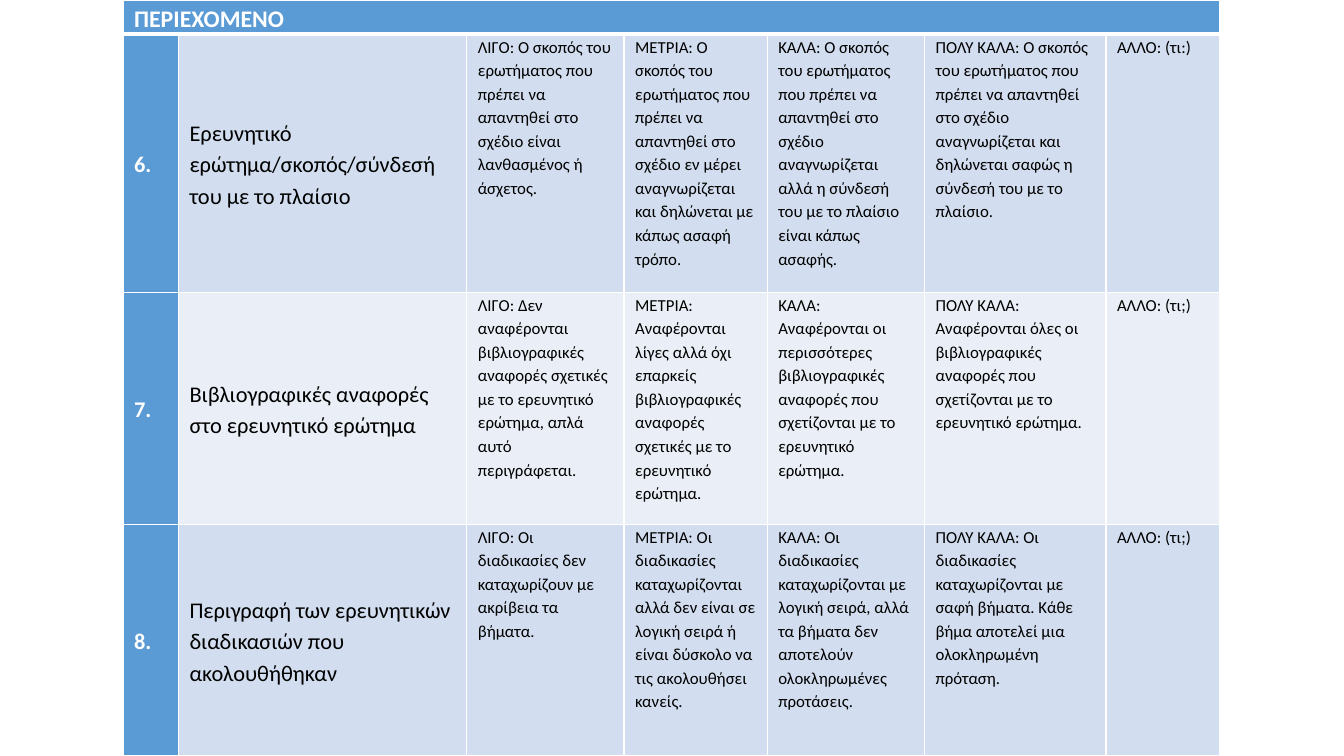
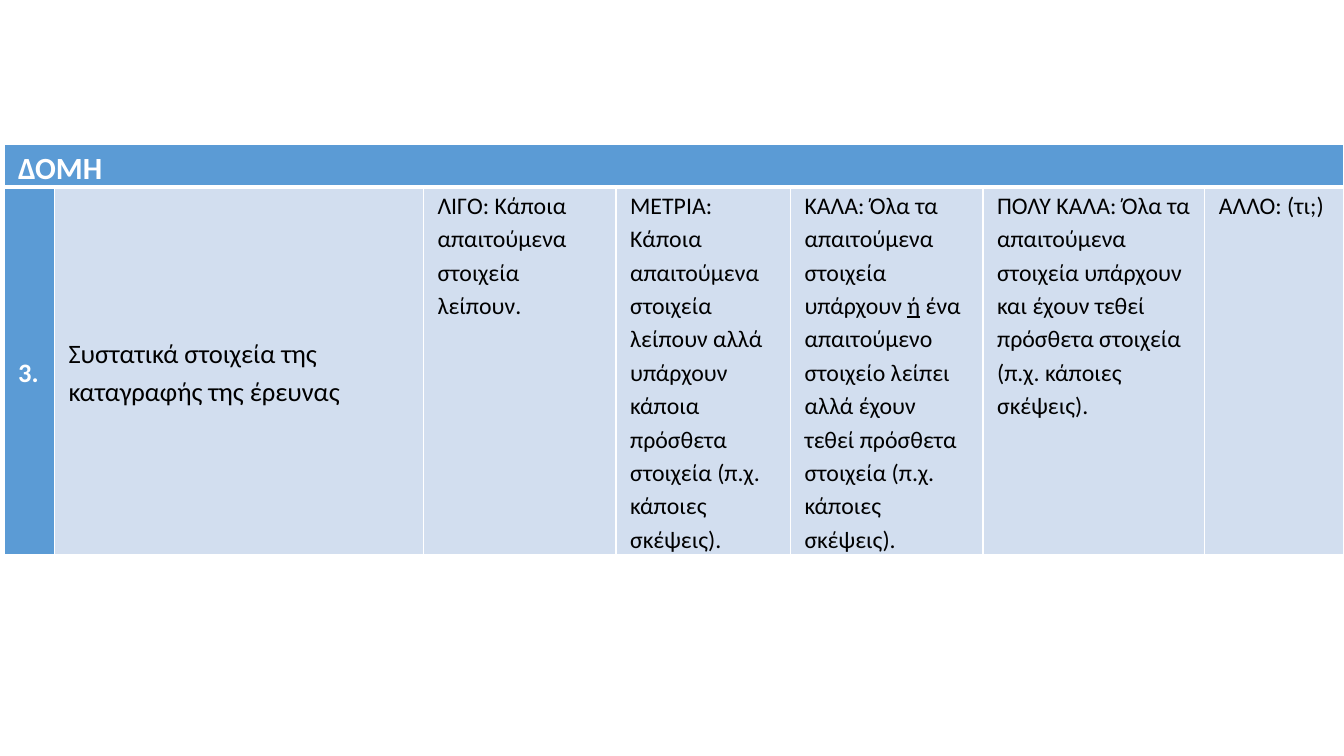
from pptx import Presentation
from pptx.util import Inches, Pt
from pptx.dml.color import RGBColor
from pptx.enum.text import MSO_ANCHOR
from pptx.oxml import parse_xml
from pptx.oxml.ns import nsdecls

WHITE = RGBColor(0xFF, 0xFF, 0xFF)
BLACK = RGBColor(0, 0, 0)
BLUE = RGBColor(0x5B, 0x9B, 0xD5)
BANDS = [RGBColor(0xD2, 0xDE, 0xEF), RGBColor(0xEA, 0xEF, 0xF7)]
FONT = "Calibri"

# One rubric per slide; text between asterisks is underlined
RUBRICS = [
    {
        "title": "ΠΕΡΙΕΧΟΜΕΝΟ",
        "left": 1.22, "top": 0, "inset": 0.11,
        "cols": [0.55, 2.86, 1.56, 1.42, 1.56, 1.8, 1.13],
        "heights": [0.34, 2.56, 2.3, 2.3],
        "title_size": 17, "label_size": 16, "level_size": 12,
        "rows": [
            ["6.", "Ερευνητικό ερώτημα/σκοπός/σύνδεσή του με το πλαίσιο",
             "ΛΙΓΟ: Ο σκοπός του ερωτήματος που πρέπει να απαντηθεί στο σχέδιο "
             "είναι λανθασμένος ή άσχετος.",
             "ΜΕΤΡΙΑ: Ο σκοπός του ερωτήματος που πρέπει να απαντηθεί στο σχέδιο "
             "εν μέρει αναγνωρίζεται και δηλώνεται με κάπως ασαφή τρόπο.",
             "ΚΑΛΑ: Ο σκοπός του ερωτήματος που πρέπει να απαντηθεί στο σχέδιο "
             "αναγνωρίζεται αλλά η σύνδεσή του με το πλαίσιο είναι κάπως ασαφής.",
             "ΠΟΛΥ ΚΑΛΑ: Ο σκοπός του ερωτήματος που πρέπει να απαντηθεί στο σχέδιο "
             "αναγνωρίζεται και δηλώνεται σαφώς η σύνδεσή του με το πλαίσιο.",
             "ΑΛΛΟ: (τι:)"],
            ["7.", "Βιβλιογραφικές αναφορές στο ερευνητικό ερώτημα",
             "ΛΙΓΟ: Δεν αναφέρονται βιβλιογραφικές αναφορές σχετικές με το "
             "ερευνητικό ερώτημα, απλά αυτό περιγράφεται.",
             "ΜΕΤΡΙΑ: Αναφέρονται λίγες αλλά όχι επαρκείς βιβλιογραφικές αναφορές "
             "σχετικές με το ερευνητικό ερώτημα.",
             "ΚΑΛΑ: Αναφέρονται οι περισσότερες βιβλιογραφικές αναφορές που "
             "σχετίζονται με το ερευνητικό ερώτημα.",
             "ΠΟΛΥ ΚΑΛΑ: Αναφέρονται όλες οι βιβλιογραφικές αναφορές που "
             "σχετίζονται με το ερευνητικό ερώτημα.",
             "ΑΛΛΟ: (τι;)"],
            ["8.", "Περιγραφή των ερευνητικών διαδικασιών που ακολουθήθηκαν",
             "ΛΙΓΟ: Οι διαδικασίες δεν καταχωρίζουν με ακρίβεια τα βήματα.",
             "ΜΕΤΡΙΑ: Οι διαδικασίες καταχωρίζονται αλλά δεν είναι σε λογική σειρά "
             "ή είναι δύσκολο να τις ακολουθήσει κανείς.",
             "ΚΑΛΑ: Οι διαδικασίες καταχωρίζονται με λογική σειρά, αλλά τα βήματα "
             "δεν αποτελούν ολοκληρωμένες προτάσεις.",
             "ΠΟΛΥ ΚΑΛΑ: Οι διαδικασίες καταχωρίζονται με σαφή βήματα. Κάθε βήμα "
             "αποτελεί μια ολοκληρωμένη πρόταση.",
             "ΑΛΛΟ: (τι;)"],
        ],
    },
    {
        "title": "ΔΟΜΗ",
        "left": 0.04, "top": 1.43, "inset": 0.14,
        "cols": [0.5, 3.66, 1.91, 1.73, 1.91, 2.2, 1.38],
        "heights": [0.42, 3.54],
        "title_size": 22, "label_size": 19, "level_size": 17,
        "rows": [
            ["3.", "Συστατικά στοιχεία της καταγραφής της έρευνας",
             "ΛΙΓΟ: Κάποια απαιτούμενα στοιχεία λείπουν.",
             "ΜΕΤΡΙΑ: Κάποια απαιτούμενα στοιχεία λείπουν αλλά υπάρχουν κάποια "
             "πρόσθετα στοιχεία (π.χ. κάποιες σκέψεις).",
             "ΚΑΛΑ: Όλα τα απαιτούμενα στοιχεία υπάρχουν *ή* ένα απαιτούμενο "
             "στοιχείο λείπει αλλά έχουν τεθεί πρόσθετα στοιχεία (π.χ. κάποιες σκέψεις).",
             "ΠΟΛΥ ΚΑΛΑ: Όλα τα απαιτούμενα στοιχεία υπάρχουν και έχουν τεθεί "
             "πρόσθετα στοιχεία (π.χ. κάποιες σκέψεις).",
             "ΑΛΛΟ: (τι;)"],
        ],
    },
]


def set_borders(cell, top, bottom):
    tcPr = cell._tc.get_or_add_tcPr()
    for side, width in (("L", 1), ("R", 1), ("T", top), ("B", bottom)):
        tcPr.append(parse_xml(
            f'<a:ln{side} {nsdecls("a")} w="{Pt(width)}"><a:solidFill>'
            f'<a:srgbClr val="{WHITE}"/></a:solidFill></a:ln{side}>'))


def fill_cell(cell, text, size, fill, inset, heading, middle):
    cell.fill.solid()
    cell.fill.fore_color.rgb = fill
    cell.margin_left = cell.margin_right = Inches(inset)
    cell.margin_top = cell.margin_bottom = 0
    cell.vertical_anchor = MSO_ANCHOR.MIDDLE if middle else MSO_ANCHOR.TOP
    p = cell.text_frame.paragraphs[0]
    p.line_spacing = 1.15
    p.space_after = Pt(10)
    for i, part in enumerate(text.split("*")):
        r = p.add_run()
        r.text = part
        r.font.name = FONT
        r.font.size = Pt(size)
        r.font.bold = heading
        r.font.underline = i % 2 == 1
        r.font.color.rgb = WHITE if heading else BLACK


prs = Presentation()
prs.slide_width = Inches(13.33)
prs.slide_height = Inches(7.5)

for rubric in RUBRICS:
    s = prs.slides.add_slide(prs.slide_layouts[6])
    cols, heights, inset = rubric["cols"], rubric["heights"], rubric["inset"]
    table = s.shapes.add_table(
        len(heights), len(cols), Inches(rubric["left"]), Inches(rubric["top"]),
        Inches(sum(cols)), Inches(sum(heights))).table
    for col, width in zip(table.columns, cols):
        col.width = Inches(width)
    for row, height in zip(table.rows, heights):
        row.height = Inches(height)

    # White grid, thicker under the title row
    for i, row in enumerate(table.rows):
        for cell in row.cells:
            set_borders(cell, 3 if i == 1 else 1, 3 if i == 0 else 1)

    # Title row
    title = table.cell(0, 0)
    title.merge(table.cell(0, len(cols) - 1))
    fill_cell(title, rubric["title"], rubric["title_size"], BLUE, inset, True, True)

    # Criteria: number, name, then the levels
    for i, texts in enumerate(rubric["rows"]):
        for j, text in enumerate(texts):
            size = rubric["label_size"] if j < 2 else rubric["level_size"]
            fill = BLUE if j == 0 else BANDS[i % 2]
            fill_cell(table.cell(i + 1, j), text, size, fill, inset, j == 0, j < 2)

prs.save("out.pptx")
